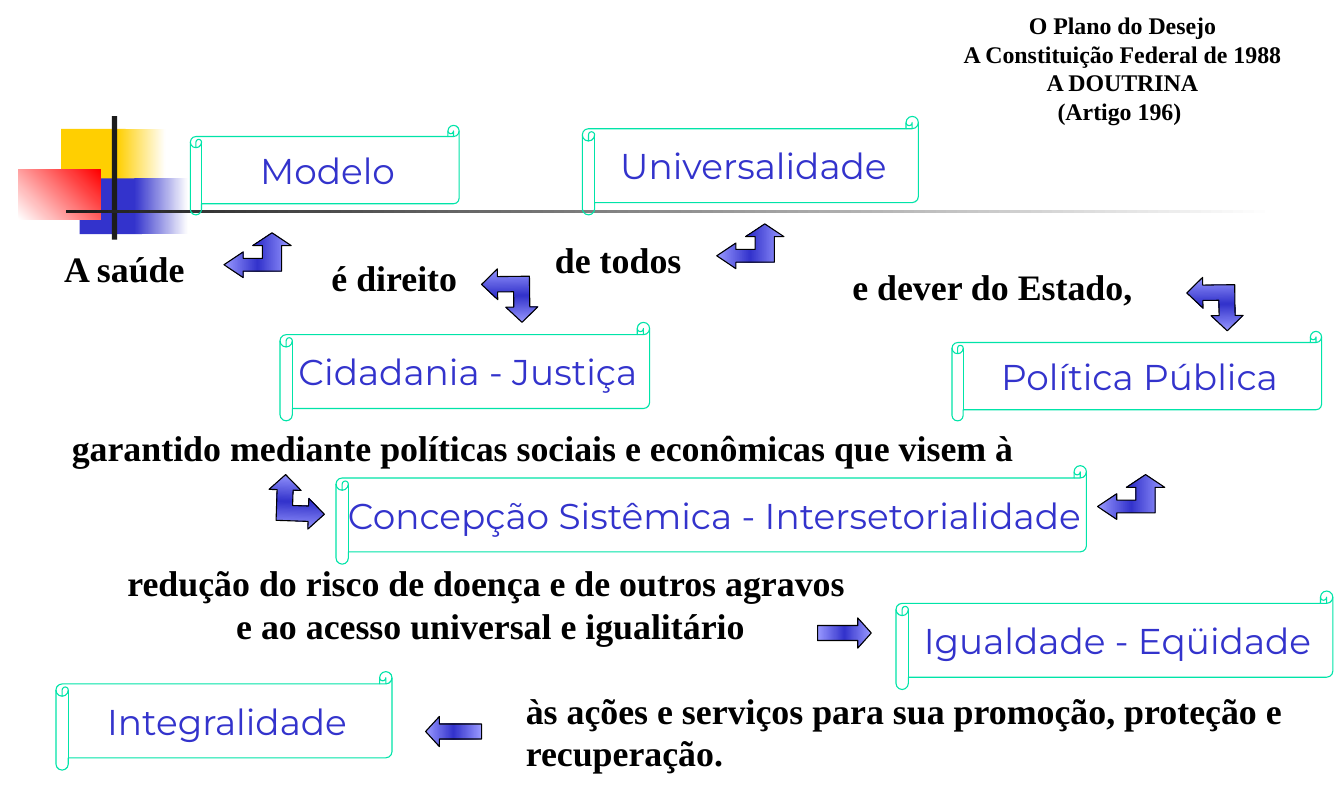
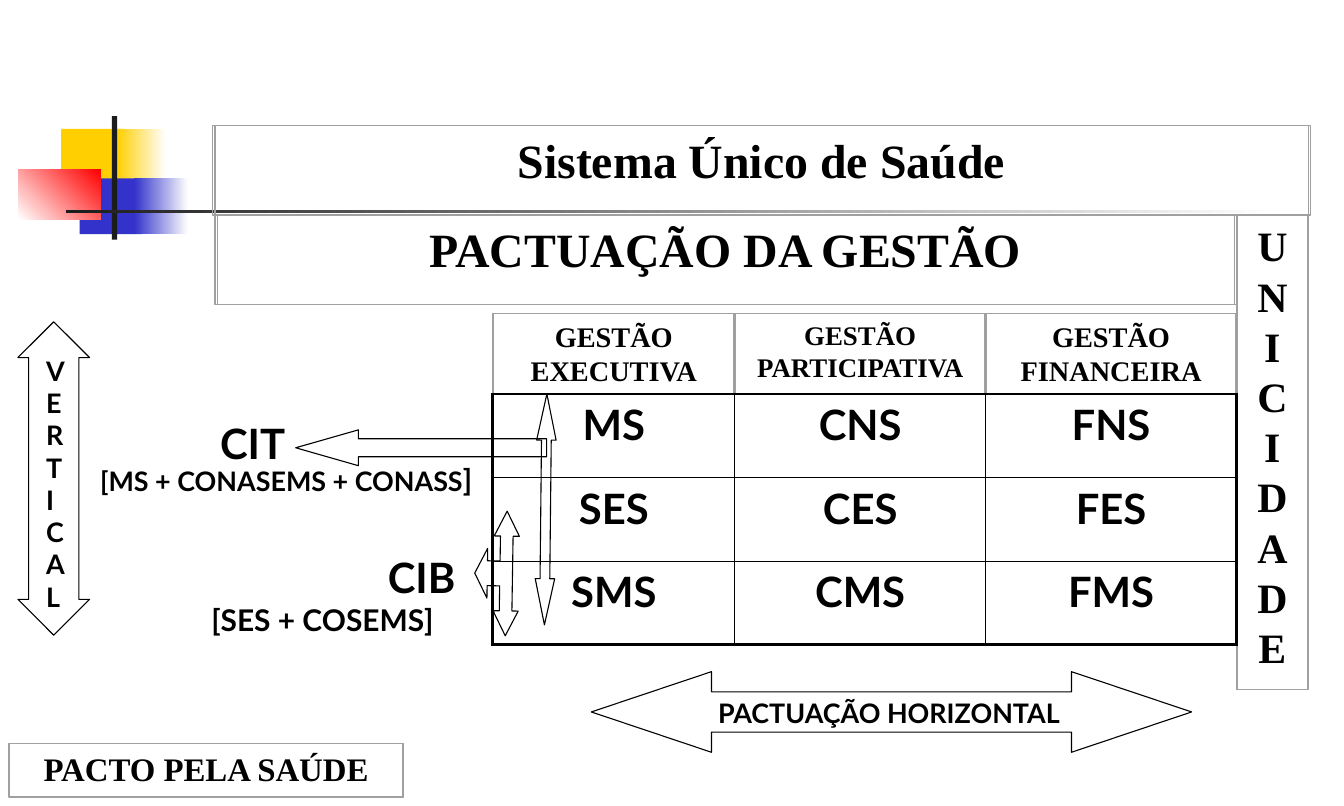
from dataclasses import dataclass
from typing import NamedTuple, Sequence

from lxml.etree import SubElement
from pptx import Presentation
from pptx.dml.color import RGBColor
from pptx.enum.shapes import MSO_SHAPE as Preset
from pptx.enum.text import MSO_ANCHOR as Anchor, MSO_AUTO_SIZE as AutoSize, PP_ALIGN as Align
from pptx.oxml.ns import qn
from pptx.shapes.autoshape import Shape
from pptx.slide import Slide
from pptx.table import _Cell as Cell
from pptx.text.text import TextFrame
from pptx.util import Pt

BLACK, WHITE, CHARCOAL = "000000", "FFFFFF", "1C1C1C"
BLUE, LILAC, YELLOW, RED = "3333CC", "9999FF", "FFCF01", "FF0000"
SCROLL_GREEN, FRAME_GREY = "00E4A8", "A0A0A0"
SERIF, SANS, DISPLAY = "Times New Roman", "Lato", "Montserrat"
ARROW_BLUES = (LILAC, BLUE, LILAC)


class Box(NamedTuple):
    left: float
    top: float
    width: float
    height: float


class Run(NamedTuple):
    text: str
    size: float


class Line(NamedTuple):
    runs: tuple[Run, ...]
    align: Align = Align.CENTER


class Outline(NamedTuple):
    """Corner points on a grid of columns by rows."""
    columns: int
    rows: int
    points: tuple[tuple[int, int], ...]


@dataclass(frozen=True)
class Block:
    box: Box
    colours: tuple[str, ...]
    angle: float = 0


@dataclass(frozen=True)
class Label:
    box: Box
    lines: Sequence[Line]
    font: str = SERIF


@dataclass(frozen=True)
class Arrow:
    preset: Preset
    box: Box
    adjustments: tuple[float, float]
    rotation: float = 0


@dataclass(frozen=True)
class Frame:
    """A double border: the inner one is narrower by the inset on each side."""
    box: Box
    lines: Sequence[Line] = ()
    inset: float = 0.5


LEFT_UP = Outline(7, 7, (
    (5, 0), (3, 2), (4, 2), (4, 4), (2, 4), (2, 3),
    (0, 5), (2, 7), (2, 6), (6, 6), (6, 2), (7, 2)))
LEFT_RIGHT_UP = Outline(10, 7, (
    (5, 0), (3, 2), (4, 2), (4, 4), (2, 4), (2, 3), (0, 5), (2, 7), (2, 6),
    (8, 6), (8, 7), (10, 5), (8, 3), (8, 4), (6, 4), (6, 2), (7, 2)))

MOTIF = (
    Block(Box(41, 86.4, 43.2, 37.4), (YELLOW,)),
    Block(Box(78.5, 86.4, 32.4, 37.4), (YELLOW, WHITE)),
    Block(Box(53.3, 119.5, 41.8, 37.4), (BLUE,)),
    Block(Box(90, 119.5, 36, 37.4), (BLUE, WHITE)),
    Block(Box(12.2, 113.8, 55.4, 33.1), (WHITE, RED), 45),
    Block(Box(74.9, 77.8, 3.6, 82.8), (CHARCOAL,)),
    Block(Box(43.9, 140.4, 810, 2.2), (CHARCOAL, WHITE)),
)

SCROLLS = {
    "Modelo": Box(127.5, 84, 180, 60),
    "Cidadania - Justiça": Box(187.5, 216, 247.5, 66),
    "Política Pública": Box(637.5, 222, 247.5, 60),
    "Universalidade": Box(390, 78, 225, 66),
    "Concepção Sistêmica - Intersetorialidade": Box(225, 312, 502.5, 66),
    "Igualdade - Eqüidade": Box(600, 396, 292.5, 66),
    "Integralidade": Box(37.5, 450, 225, 66),
}
BENT_ARROWS = (
    (Box(150, 156, 45, 30), 0),
    (Box(480, 150, 45, 30), 0),
    (Box(735, 318, 45, 30), 0),
    (Box(323.3, 179.3, 36, 37.5), 269.3),
    (Box(795.6, 185, 36, 37.5), 269.3),
    (Box(180.7, 317.5, 36, 37.5), 91.9),
)
STRAIGHT_ARROWS = (
    Arrow(Preset.RIGHT_ARROW, Box(547.5, 414, 36, 20.2), (0.5, 0.45)),
    Arrow(Preset.LEFT_ARROW, Box(285, 480, 37.5, 20.2), (0.5, 0.46)),
)


def lines_of(text: str, size: float, align: Align = Align.CENTER) -> list[Line]:
    return [Line((Run(part, size),), align) for part in text.split("\n")]


ARTICLE = (
    Label(Box(15, 372, 627, 65), lines_of(
        "redução do risco de doença e de outros agravos \n"
        "e ao acesso universal e igualitário", 24)),
    Label(Box(22.5, 162, 121.5, 36), lines_of("A saúde", 24)),
    Label(Box(202.5, 168, 129, 36), lines_of("é direito ", 24)),
    Label(Box(352.5, 156, 129, 36), lines_of("de todos ", 24)),
    Label(Box(532.5, 174, 270, 36), lines_of("e dever do Estado, ", 24)),
    Label(Box(41, 282, 806, 36), lines_of(
        "garantido mediante políticas sociais e econômicas que visem à", 24, Align.LEFT)),
    Label(Box(345, 457.5, 525, 65), lines_of(
        "às ações e serviços para sua promoção, proteção e recuperação.", 24, Align.LEFT)),
)

COLUMN_WIDTHS = (162, 168, 168)
TABLE_LEFT, TABLE_TOP, ROW_HEIGHT = 330, 264, 56
COLUMN_HEADS = (("GESTÃO EXECUTIVA", 19), ("GESTÃO PARTICIPATIVA", 18), ("GESTÃO FINANCEIRA", 19))
BODIES = (("MS", "CNS", "FNS"), ("SES", "CES", "FES"), ("SMS", "CMS", "FMS"))
FRAMES = (
    Frame(Box(142.5, 84, 735, 60), inset=1.5),
    Frame(Box(828, 144, 48, 318), lines_of("UN\nI\nC\nI\nDADE", 28)),
    Frame(Box(144, 144, 684, 60), lines_of("PACTUAÇÃO DA GESTÃO", 32), 1.5),
    Frame(Box(6, 498, 264, 36), lines_of("PACTO PELA SAÚDE", 22)),
)
PACT_ARROWS = (
    Arrow(Preset.LEFT_RIGHT_ARROW, Box(396, 450, 402, 54), (0.5, 1.49)),
    Arrow(Preset.UP_DOWN_ARROW, Box(12, 215.6, 48, 210), (0.44, 0.7)),
    Arrow(Preset.LEFT_RIGHT_ARROW, Box(288, 334.8, 154.8, 13), (0.5, 2.38), 270.6),
    Arrow(Preset.LEFT_ARROW, Box(198, 288, 168, 24), (0.5, 1.75)),
)
PACT_LABELS = (
    Label(Box(473.8, 463, 260, 29), lines_of("PACTUAÇÃO HORIZONTAL", 18, Align.LEFT), SANS),
    Label(Box(23.8, 234, 36, 180), lines_of("V\nE\nR\nT\nI\nC\nA\nL", 18, Align.LEFT), SANS),
    Label(Box(120, 366, 192, 65),
          lines_of("CIB", 28, Align.RIGHT) + lines_of("[SES + COSEMS]", 20), SANS),
    Label(Box(126, 276, 72, 41), lines_of("CIT", 28, Align.RIGHT), SANS),
    Label(Box(60, 306, 288, 31),
          [Line((Run("[MS + CONASEMS + CONASS", 18), Run("]", 20)), Align.LEFT)], SANS),
)


def rgb(colour: str) -> RGBColor:
    return RGBColor.from_string(colour)


def points(box: Box) -> list[Pt]:
    return [Pt(length) for length in box]


def write(frame: TextFrame, lines: Sequence[Line], font: str = SERIF,
          colour: str = BLACK, bold: bool = True) -> None:
    for index, line in enumerate(lines):
        paragraph = frame.add_paragraph() if index else frame.paragraphs[0]
        paragraph.alignment = line.align
        for text, size in line.runs:
            run = paragraph.add_run()
            run.text = text
            run.font.name, run.font.size, run.font.bold = font, Pt(size), bold
            run.font.color.rgb = rgb(colour)


def paint(shape: Shape, colours: Sequence[str] = (), line: str = "",
          line_width: float = 0.75, angle: float = 0) -> None:
    """Fill with nothing, one colour or an even gradient; an empty line means none."""
    shape.shadow.inherit = False
    fill = shape.fill
    if not colours:
        fill.background()
    elif len(colours) == 1:
        fill.solid()
        fill.fore_color.rgb = rgb(colours[0])
    else:
        fill.gradient()
        fill.gradient_angle = angle
        stops = shape.element.spPr.find(".//" + qn("a:gsLst"))
        stops.clear()
        for index, colour in enumerate(colours):
            position = 100000 * index // (len(colours) - 1)
            stop = SubElement(stops, qn("a:gs"), pos=str(position))
            SubElement(stop, qn("a:srgbClr"), val=colour)
    if line:
        shape.line.color.rgb = rgb(line)
        shape.line.width = Pt(line_width)
    else:
        shape.line.fill.background()


def add_motif(slide: Slide) -> None:
    """Draw the motif and hand it to the slide master, so that every slide shows it."""
    master_tree = slide.slide_layout.slide_master.shapes.element
    for shape_id, block in enumerate(MOTIF, start=101):
        shape = slide.shapes.add_shape(Preset.RECTANGLE, *points(block.box))
        paint(shape, block.colours, angle=block.angle)
        shape.element.nvSpPr.cNvPr.id = shape_id
        master_tree.append(shape.element)


def set_title(slide: Slide, box: Box, lines: Sequence[Line]) -> None:
    title = slide.shapes.title
    title.left, title.top, title.width, title.height = points(box)
    title.text_frame.auto_size = AutoSize.NONE
    title.text_frame.vertical_anchor = Anchor.TOP
    write(title.text_frame, lines)


def add_label(slide: Slide, label: Label) -> None:
    frame = slide.shapes.add_textbox(*points(label.box)).text_frame
    frame.word_wrap = True
    write(frame, label.lines, label.font)


def add_arrow(slide: Slide, arrow: Arrow, colours: Sequence[str] = ()) -> None:
    shape = slide.shapes.add_shape(arrow.preset, *points(arrow.box))
    for index, adjustment in enumerate(arrow.adjustments):
        shape.adjustments[index] = adjustment
    shape.rotation = arrow.rotation
    paint(shape, colours, BLACK)


def add_outline(slide: Slide, outline: Outline, box: Box, rotation: float,
                colours: Sequence[str] = ()) -> None:
    left, top, width, height = points(box)
    start, *others = outline.points
    builder = slide.shapes.build_freeform(
        *start, scale=(width / outline.columns, height / outline.rows))
    builder.add_line_segments(others, close=True)
    shape = builder.convert_to_shape(left, top)
    shape.rotation = rotation
    paint(shape, colours, BLACK)


def add_scroll(slide: Slide, text: str, box: Box) -> None:
    shape = slide.shapes.add_shape(Preset.HORIZONTAL_SCROLL, *points(box))
    paint(shape, line=SCROLL_GREEN)
    frame = shape.text_frame
    frame.word_wrap = False
    frame.vertical_anchor = Anchor.MIDDLE
    write(frame, lines_of(text, 24), DISPLAY, BLUE, bold=False)


def add_frame(slide: Slide, frame: Frame) -> None:
    left, top, width, height = frame.box
    inner = Box(left + frame.inset, top, width - 2 * frame.inset, height)
    for box, line_width, lines in ((inner, 0, ()), (frame.box, 0.87, frame.lines)):
        shape = slide.shapes.add_shape(Preset.RECTANGLE, *points(box))
        paint(shape, line=FRAME_GREY, line_width=line_width)
        shape.text_frame.vertical_anchor = Anchor.TOP
        write(shape.text_frame, lines)


def set_borders(cell: Cell, widths: dict[str, float]) -> None:
    properties = cell._tc.get_or_add_tcPr()
    for side, width in widths.items():
        border = SubElement(properties, qn(f"a:ln{side}"), w=str(Pt(width)))
        SubElement(SubElement(border, qn("a:solidFill")), qn("a:srgbClr"), val=BLACK)


def add_bodies_table(slide: Slide) -> None:
    rows, columns = len(BODIES), len(COLUMN_WIDTHS)
    box = Box(TABLE_LEFT, TABLE_TOP, sum(COLUMN_WIDTHS), rows * ROW_HEIGHT)
    table = slide.shapes.add_table(rows, columns, *points(box)).table
    table.first_row = table.horz_banding = False
    for column, width in zip(table.columns, COLUMN_WIDTHS):
        column.width = Pt(width)
    for row, names in enumerate(BODIES):
        for column, name in enumerate(names):
            cell = table.cell(row, column)
            outer = {"L": column == 0, "R": column == columns - 1,
                     "T": row == 0, "B": row == rows - 1}
            set_borders(cell, {side: 2.25 if edge else 1 for side, edge in outer.items()})
            cell.fill.background()
            write(cell.text_frame, lines_of(name, 28), SANS)


def build_doctrine(slide: Slide) -> None:
    set_title(slide, Box(605.5, 3.6, 292.3, 84.2), lines_of(
        "O Plano do Desejo\nA Constituição Federal de 1988\nA DOUTRINA\n(Artigo 196) ", 16))
    for label in ARTICLE:
        add_label(slide, label)
    for box, rotation in BENT_ARROWS:
        add_outline(slide, LEFT_UP, box, rotation, ARROW_BLUES)
    for arrow in STRAIGHT_ARROWS:
        add_arrow(slide, arrow, ARROW_BLUES)
    for text, box in SCROLLS.items():
        add_scroll(slide, text, box)


def build_pact(slide: Slide) -> None:
    set_title(slide, Box(156, 84, 708, 59), lines_of("Sistema Único de Saúde", 32))
    for frame in FRAMES:
        add_frame(slide, frame)
    left = TABLE_LEFT
    for (text, size), width in zip(COLUMN_HEADS, COLUMN_WIDTHS):
        add_frame(slide, Frame(Box(left, TABLE_TOP - 54, width, 54), lines_of(text, size)))
        left += width
    add_bodies_table(slide)
    for arrow in PACT_ARROWS:
        add_arrow(slide, arrow)
    add_outline(slide, LEFT_RIGHT_UP, Box(290.9, 369.4, 83.5, 29.5), 270.9)
    for label in PACT_LABELS:
        add_label(slide, label)


def main() -> None:
    presentation = Presentation()
    presentation.slide_width, presentation.slide_height = Pt(900), Pt(540)
    title_only = presentation.slide_layouts[5]
    doctrine, pact = (presentation.slides.add_slide(title_only) for _ in range(2))
    add_motif(doctrine)
    build_doctrine(doctrine)
    build_pact(pact)
    presentation.save("out.pptx")


if __name__ == "__main__":
    main()
